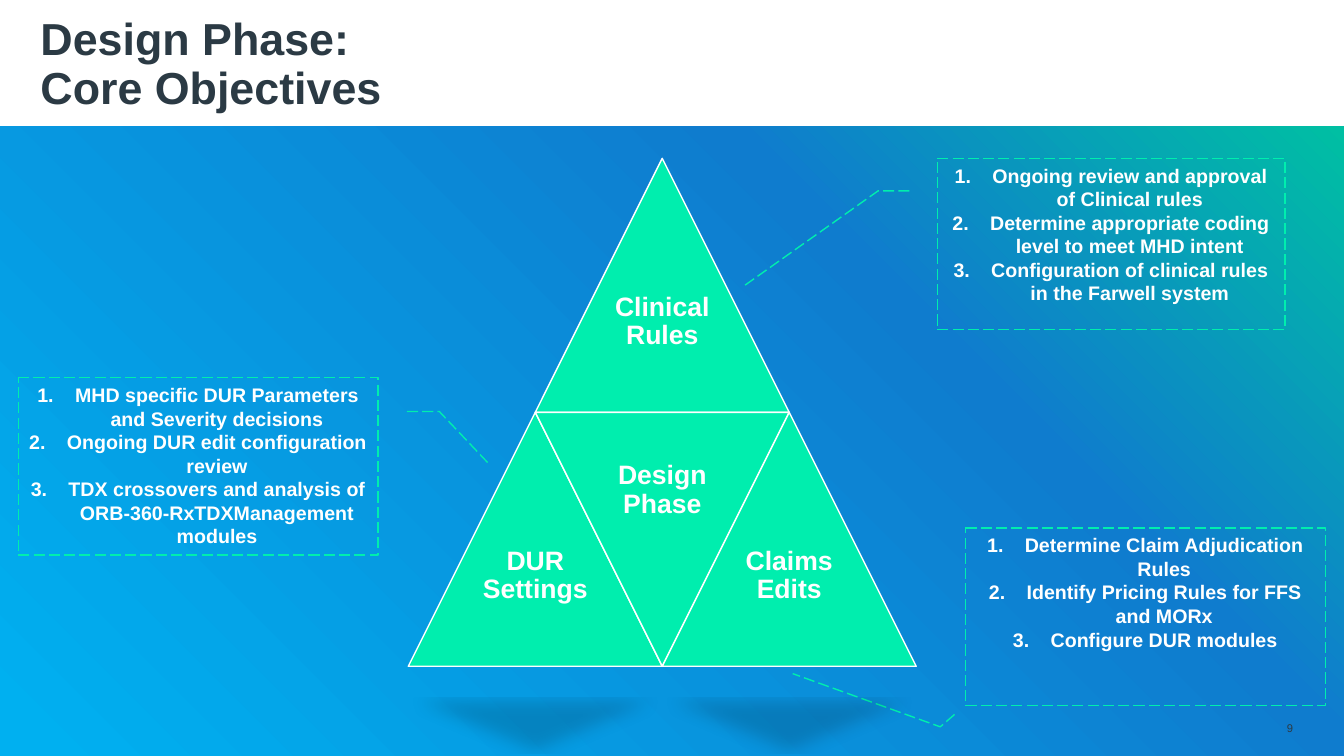
from lxml.etree import SubElement
from pptx import Presentation
from pptx.dml.color import RGBColor
from pptx.enum.dml import MSO_LINE_DASH_STYLE as Dash
from pptx.enum.shapes import MSO_SHAPE as Shape
from pptx.enum.text import MSO_ANCHOR as Anchor, MSO_AUTO_SIZE as AutoSize, PP_ALIGN as Align
from pptx.oxml.ns import qn
from pptx.util import Cm, Pt

COLOURS = {
    "ink": "2B3A44",
    "white": "FFFFFF",
    "mint": "00EEAE",
    "sky": "00B0F0",
    "blue": "0F7CCE",
    "green": "00BFA3",
    "black": "000000",
}
SIDE = 6.4
PYRAMID_LEFT, PYRAMID_TOP = 10.29, 3.99


def colour(name):
    return RGBColor.from_string(COLOURS[name])


def add_xml(parent, tag, **attributes):
    element = SubElement(parent, qn(tag))
    for key, value in attributes.items():
        element.set(key, str(value))
    return element


def write_text(box, lines, size, ink="white", bold=True, align=Align.CENTER, spacing=None,
               after=None, numbered=False, insets=(0, 0, 0, 0), anchor=Anchor.TOP):
    frame = box.text_frame
    frame.word_wrap = True
    frame.auto_size = AutoSize.NONE
    frame.vertical_anchor = anchor
    frame.margin_left, frame.margin_top, frame.margin_right, frame.margin_bottom = map(Cm, insets)
    for index, line in enumerate(lines):
        para = frame.paragraphs[0] if index == 0 else frame.add_paragraph()
        para.alignment = align
        para.line_spacing = spacing
        para.space_after = after
        if numbered:
            properties = para._p.get_or_add_pPr()
            properties.set("marL", str(Cm(0.95)))
            properties.set("indent", str(-Cm(0.95)))
            add_xml(properties, "a:buFont", typeface="+mj-lt")
            add_xml(properties, "a:buAutoNum", type="arabicPeriod")
        for part, words in enumerate(line.splitlines()):
            if part:
                para.add_line_break()
            span = para.add_run()
            span.text = words
            span.font.name = "Arial"
            span.font.size = Pt(size)
            span.font.bold = bold
            span.font.color.rgb = colour(ink)


def add_backdrop(page):
    backdrop = page.shapes.add_shape(Shape.RECTANGLE, 0, Cm(3.2), Cm(33.87), Cm(15.85))
    backdrop.shadow.inherit = False
    backdrop.line.fill.background()
    backdrop.fill.gradient()
    backdrop.fill.gradient_angle = 45
    stops = backdrop._element.spPr.find(qn("a:gradFill")).find(qn("a:gsLst"))
    for stop in list(stops):
        stops.remove(stop)
    for percent, name in ((2, "sky"), (69, "blue"), (100, "green")):
        stop = add_xml(stops, "a:gs", pos=percent * 1000)
        add_xml(stop, "a:srgbClr", val=COLOURS[name])


def add_title(page, text):
    title = page.shapes.title
    title.left, title.top, title.width, title.height = Cm(1.02), Cm(0.38), Cm(30.7), Cm(2.54)
    write_text(title, [text], 32, ink="ink", align=Align.LEFT, spacing=0.9, anchor=Anchor.MIDDLE)


def add_page_number(page, number):
    box = page.shapes.add_textbox(Cm(31.7), Cm(17.78), Cm(0.89), Cm(0.51))
    write_text(box, [number], 8, ink="ink", bold=False, align=Align.RIGHT, spacing=Pt(21))


def add_callout(page, left, top, width, height, leader, lines):
    box = page.shapes.add_shape(Shape.LINE_CALLOUT_2, Cm(left), Cm(top), Cm(width), Cm(height))
    box.shadow.inherit = False
    box.fill.background()
    box.line.color.rgb = colour("mint")
    box.line.width = Pt(1)
    box.line.dash_style = Dash.LONG_DASH
    for index, value in enumerate(leader):
        box.adjustments[index] = value
    write_text(box, lines, 14, numbered=True, insets=(0.25, 0.13, 0.25, 0.13))


def add_cast_shadow(shape):
    shape.shadow.inherit = False
    effects = shape._element.spPr.find(qn("a:effectLst"))
    shadow = add_xml(effects, "a:outerShdw", blurRad=Pt(12), dist=Pt(25), dir=5400000,
                     sx=90000, sy=-19000, rotWithShape=0)
    tint = add_xml(shadow, "a:srgbClr", val=COLOURS["black"])
    add_xml(tint, "a:alpha", val=15000)


def add_triangle(page, column, row, label, inverted=False):
    left, top = PYRAMID_LEFT + column * SIDE / 2, PYRAMID_TOP + row * SIDE
    triangle = page.shapes.add_shape(Shape.ISOSCELES_TRIANGLE, Cm(left), Cm(top), Cm(SIDE), Cm(SIDE))
    triangle.rotation = 180 if inverted else 0
    triangle.fill.solid()
    triangle.fill.fore_color.rgb = colour("mint")
    triangle.line.color.rgb = colour("white")
    triangle.line.width = Pt(1)
    add_cast_shadow(triangle)
    label_top = top if inverted else top + SIDE / 2
    box = page.shapes.add_textbox(Cm(left + SIDE / 4), Cm(label_top), Cm(SIDE / 2), Cm(SIDE / 2))
    write_text(box, [label], 19, spacing=0.9,
               insets=(0.2, 1.25 if inverted else 0.2, 0.2, 0.2))


def main():
    deck = Presentation()
    deck.slide_width, deck.slide_height = Cm(33.87), Cm(19.05)
    page = deck.slides.add_slide(deck.slide_layouts[5])
    add_backdrop(page)
    add_title(page, "Design Phase:\nCore Objectives")
    add_page_number(page, "9")
    add_callout(page, 23.62, 3.99, 8.76, 4.32, (0.19, -0.08, 0.19, -0.17, 0.75, -0.56), [
        "Ongoing review and approval of Clinical rules",
        "Determine appropriate coding level to meet MHD intent",
        "Configuration of clinical rules in the Farwell system",
    ])
    add_callout(page, 0.46, 9.52, 9.07, 4.47, (0.19, 1.08, 0.19, 1.17, 0.49, 1.31), [
        "MHD specific DUR Parameters and Severity decisions",
        "Ongoing DUR edit configuration review",
        "TDX crossovers and analysis of ORB-360-RxTDXManagement modules",
    ])
    add_callout(page, 24.33, 13.31, 9.07, 4.47, (1.05, -0.03, 1.12, -0.07, 0.82, -0.48), [
        "Determine Claim Adjudication Rules",
        "Identify Pricing Rules for FFS and MORx",
        "Configure DUR modules",
    ])
    add_triangle(page, 1, 0, "Clinical Rules")
    add_triangle(page, 0, 1, "DUR Settings")
    add_triangle(page, 1, 1, "Design Phase", inverted=True)
    add_triangle(page, 2, 1, "Claims Edits")
    deck.save("out.pptx")


if __name__ == "__main__":
    main()
